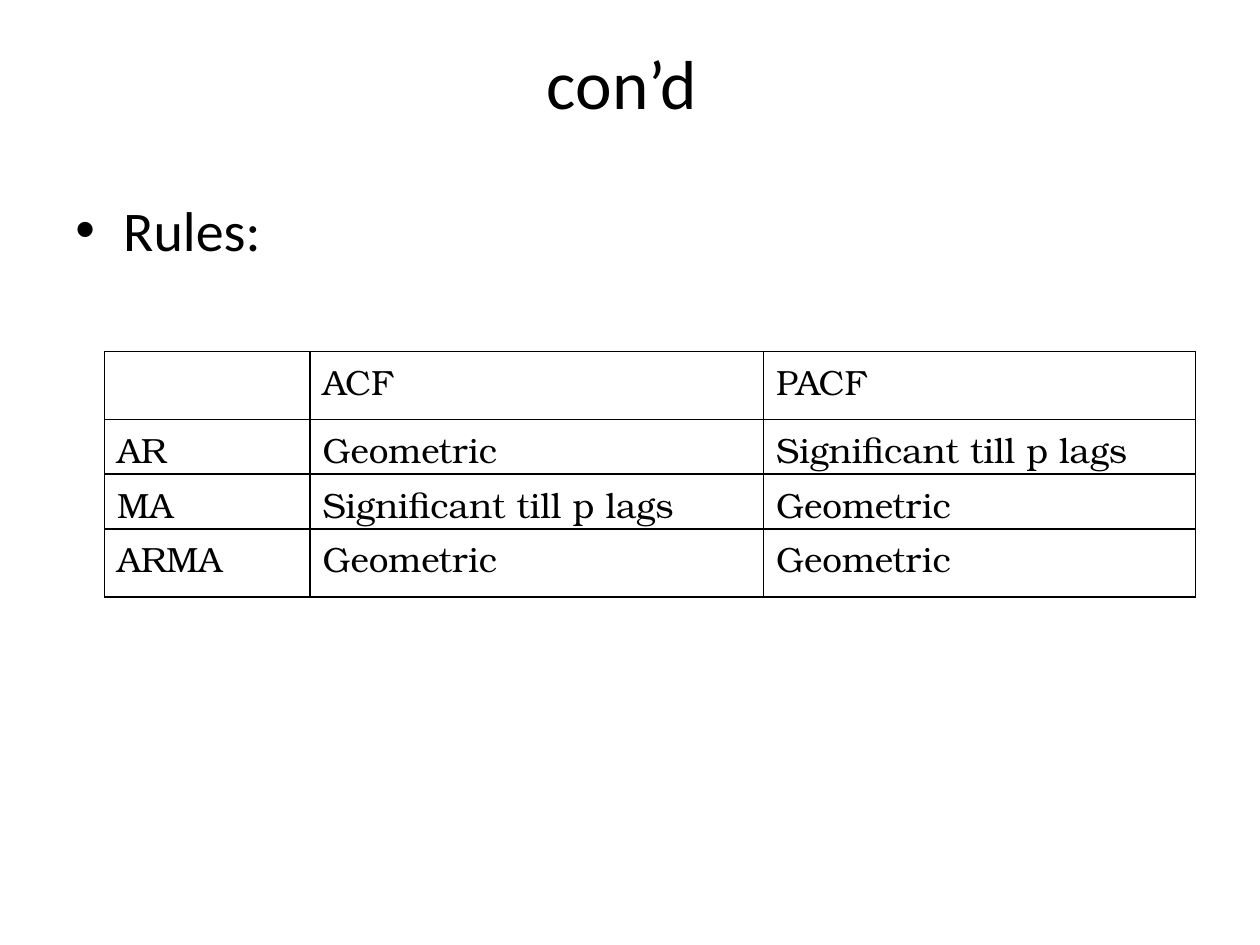
import pptx
import pptx.util
import pptx.dml.color
import pptx.enum.text
import pptx.oxml
import pptx.oxml.ns
from lxml import etree

Inches, Pt = pptx.util.Inches, pptx.util.Pt
BLACK = pptx.dml.color.RGBColor(0, 0, 0)
BODY_FONT, TABLE_FONT = "Calibri", "TeX Gyre Bonum"

COL_WIDTHS = [1.63, 3.6, 3.43]
ROW_HEIGHTS = [0.54, 0.41, 0.41, 0.54]
RULES = [
    ["", "ACF", "PACF"],
    ["AR", "Geometric", "Significant till p lags"],
    ["MA", "Significant till p lags", "Geometric"],
    ["ARMA", "Geometric", "Geometric"],
]


def format_runs(p, font, size):
    for r in p.runs:
        r.font.name = font
        r.font.size = Pt(size)
        r.font.color.rgb = BLACK


def add_title(s, text):
    sp = s.shapes.title
    sp.left, sp.top, sp.width, sp.height = map(Inches, (0.5, 0.3, 9, 0.7))
    tf = sp.text_frame
    tf.text = text
    tf.auto_size = pptx.enum.text.MSO_AUTO_SIZE.NONE
    tf.vertical_anchor = pptx.enum.text.MSO_ANCHOR.MIDDLE
    tf.paragraphs[0].alignment = pptx.enum.text.PP_ALIGN.CENTER
    format_runs(tf.paragraphs[0], BODY_FONT, 39.6)


def add_bullet_text(s, text):
    sp = s.shapes.add_textbox(*map(Inches, (0.5, 1.5, 9, 5.2)))
    tf = sp.text_frame
    tf.word_wrap = True
    p = tf.paragraphs[0]
    p.text = text
    format_runs(p, BODY_FONT, 32)
    # Hanging bullet with space before
    pPr = p._p.get_or_add_pPr()
    pPr.set("marL", str(Inches(0.38)))
    pPr.set("indent", str(-Inches(0.38)))
    before = etree.SubElement(pPr, pptx.oxml.ns.qn("a:spcBef"))
    etree.SubElement(before, pptx.oxml.ns.qn("a:spcPct")).set("val", "20000")
    etree.SubElement(pPr, pptx.oxml.ns.qn("a:buFont")).set("typeface", "Arial")
    etree.SubElement(pPr, pptx.oxml.ns.qn("a:buChar")).set("char", "•")


def set_borders(cell, width):
    tcPr = cell._tc.get_or_add_tcPr()
    for i, side in enumerate(("lnL", "lnR", "lnT", "lnB")):
        ln = pptx.oxml.parse_xml(
            f'<a:{side} {pptx.oxml.ns.nsdecls("a")} w="{Pt(width)}"><a:solidFill>'
            f'<a:srgbClr val="{BLACK}"/></a:solidFill></a:{side}>')
        tcPr.insert(i, ln)


def add_rules_table(s):
    frame = s.shapes.add_table(
        len(ROW_HEIGHTS), len(COL_WIDTHS), Inches(0.83), Inches(2.79),
        Inches(sum(COL_WIDTHS)), Inches(sum(ROW_HEIGHTS)))
    table = frame.table
    table.first_row = table.horz_banding = False
    for col, width in zip(table.columns, COL_WIDTHS):
        col.width = Inches(width)
    for row, height, texts in zip(table.rows, ROW_HEIGHTS, RULES):
        row.height = Inches(height)
        for cell, text in zip(row.cells, texts):
            cell.text = text
            format_runs(cell.text_frame.paragraphs[0], TABLE_FONT, 20)
            cell.fill.background()
            set_borders(cell, 1)


def main():
    prs = pptx.Presentation()
    prs.slide_width, prs.slide_height = Inches(10), Inches(7.5)
    s = prs.slides.add_slide(prs.slide_layouts[5])
    add_title(s, "con’d ")
    add_bullet_text(s, "Rules:")
    add_rules_table(s)
    prs.save("out.pptx")


if __name__ == "__main__":
    main()
